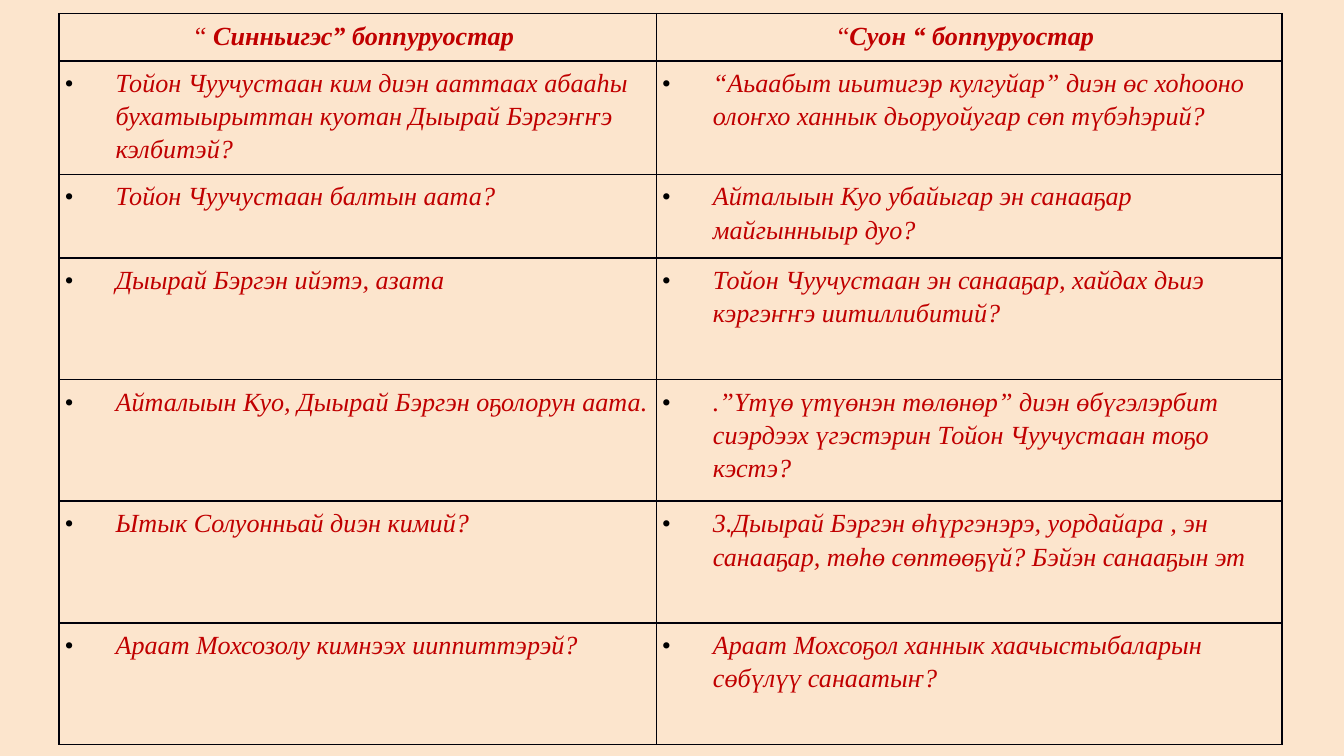
from dataclasses import dataclass

from lxml.etree import SubElement
from pptx import Presentation
from pptx.dml.color import RGBColor
from pptx.enum.text import PP_ALIGN
from pptx.oxml.ns import qn
from pptx.util import Inches, Pt


@dataclass(frozen=True)
class Theme:
    back: str = "FCE5CD"
    text: str = "C00000"
    rule: str = "00000A"
    dot: str = "000000"
    face: str = "Times New Roman"
    size: int = 14
    line: int = 1
    lead: float = 1.15


THEME = Theme()
WIDE = Inches(10)
HIGH = WIDE * 9 // 16
BOX = (0.044, 0.018, 0.91, 0.967)
COLS = (4.44, 4.65)
ROWS = (0.35, 0.84, 0.62, 0.9, 0.9, 0.9, 0.9)
DENT = int(WIDE * 0.038)
PADS = {
    "margin_left": int(WIDE * 0.004),
    "margin_right": int(WIDE * 0.004),
    "margin_top": int(WIDE * 0.003),
    "margin_bottom": int(WIDE * 0.003),
}
FLAGS = {"first_row": False, "horz_banding": False}
PLAIN = {"bold": False, "italic": False}
STRONG = {"bold": True, "italic": True}
SLANT = {"bold": False, "italic": True}

HEADS = (
    ("“ ", "Синньигэс” боппуруостар "),
    ("“", "Суон “ боппуруостар "),
)
ASKS = (
    (
        "Тойон Чуучустаан ким диэн ааттаах абааһы бухатыырыттан куотан Дыырай Бэргэҥҥэ кэлбитэй?",
        "“Аьаабыт иьитигэр кулгуйар” диэн өс хоһооно олоҥхо ханнык дьоруойугар сөп түбэһэрий?",
    ),
    (
        "Тойон Чуучустаан балтын аата?",
        "Айталыын Куо убайыгар эн санааҕар майгынныыр дуо?",
    ),
    (
        "Дыырай Бэргэн ийэтэ, азата",
        "Тойон Чуучустаан эн санааҕар, хайдах дьиэ кэргэҥҥэ иитиллибитий?",
    ),
    (
        "Айталыын Куо, Дыырай Бэргэн оҕолорун аата.",
        ".”Үтүө үтүөнэн төлөнөр” диэн өбүгэлэрбит сиэрдээх үгэстэрин Тойон Чуучустаан тоҕо кэстэ?",
    ),
    (
        "Ытык Солуонньай диэн кимий?",
        "3.Дыырай Бэргэн өһүргэнэрэ, уордайара , эн санааҕар, төһө сөптөөҕүй? Бэйэн санааҕын эт",
    ),
    (
        "Араат Мохсозолу кимнээх ииппиттэрэй?",
        "Араат Мохсоҕол ханнык хаачыстыбаларын сөбүлүү санаатыҥ?",
    ),
)


def apply(item, form):
    for name, value in form.items():
        setattr(item, name, value)


def add(node, tag, **form):
    return SubElement(node, qn("a:" + tag), **form)


def frame(cell):
    props = cell._tc.get_or_add_tcPr()
    for side in ("lnL", "lnR", "lnT", "lnB"):
        rule = add(props, side, w=str(Pt(THEME.line)))
        add(add(rule, "solidFill"), "srgbClr", val=THEME.rule)
    cell.fill.background()
    apply(cell, PADS)


def write(para, text, form):
    run = para.add_run()
    run.text = text
    apply(run.font, {"name": THEME.face, "size": Pt(THEME.size), **form})
    run.font.color.rgb = RGBColor.from_string(THEME.text)


def bullet(para):
    props = para._p.get_or_add_pPr()
    props.set("marL", str(DENT))
    props.set("indent", str(-DENT))
    add(add(props, "buClr"), "srgbClr", val=THEME.dot)
    add(props, "buFont", typeface=THEME.face)
    add(props, "buChar", char="•")


def head(cell, parts):
    para = cell.text_frame.paragraphs[0]
    apply(para, {"alignment": PP_ALIGN.CENTER, "line_spacing": THEME.lead})
    for text, form in zip(parts, (PLAIN, STRONG)):
        write(para, text, form)


def ask(cell, text):
    para = cell.text_frame.paragraphs[0]
    para.line_spacing = THEME.lead
    bullet(para)
    write(para, text, SLANT)


def grid(slide, box):
    left, top, width, height = (
        int(share * size) for share, size in zip(box, (WIDE, HIGH) * 2)
    )
    table = slide.shapes.add_table(
        len(ROWS), len(COLS), left, top, width, height
    ).table
    apply(table, FLAGS)
    for col, part in zip(table.columns, COLS):
        col.width = int(width * part / sum(COLS))
    for row, part in zip(table.rows, ROWS):
        row.height = int(height * part / sum(ROWS))
    for r, line in enumerate((HEADS, *ASKS)):
        for c, words in enumerate(line):
            cell = table.cell(r, c)
            frame(cell)
            (ask if r else head)(cell, words)


def main():
    deck = Presentation()
    apply(deck, {"slide_width": WIDE, "slide_height": HIGH})
    slide = deck.slides.add_slide(deck.slide_layouts[6])
    fill = slide.background.fill
    fill.solid()
    fill.fore_color.rgb = RGBColor.from_string(THEME.back)
    grid(slide, BOX)
    deck.save("out.pptx")


if __name__ == "__main__":
    main()
